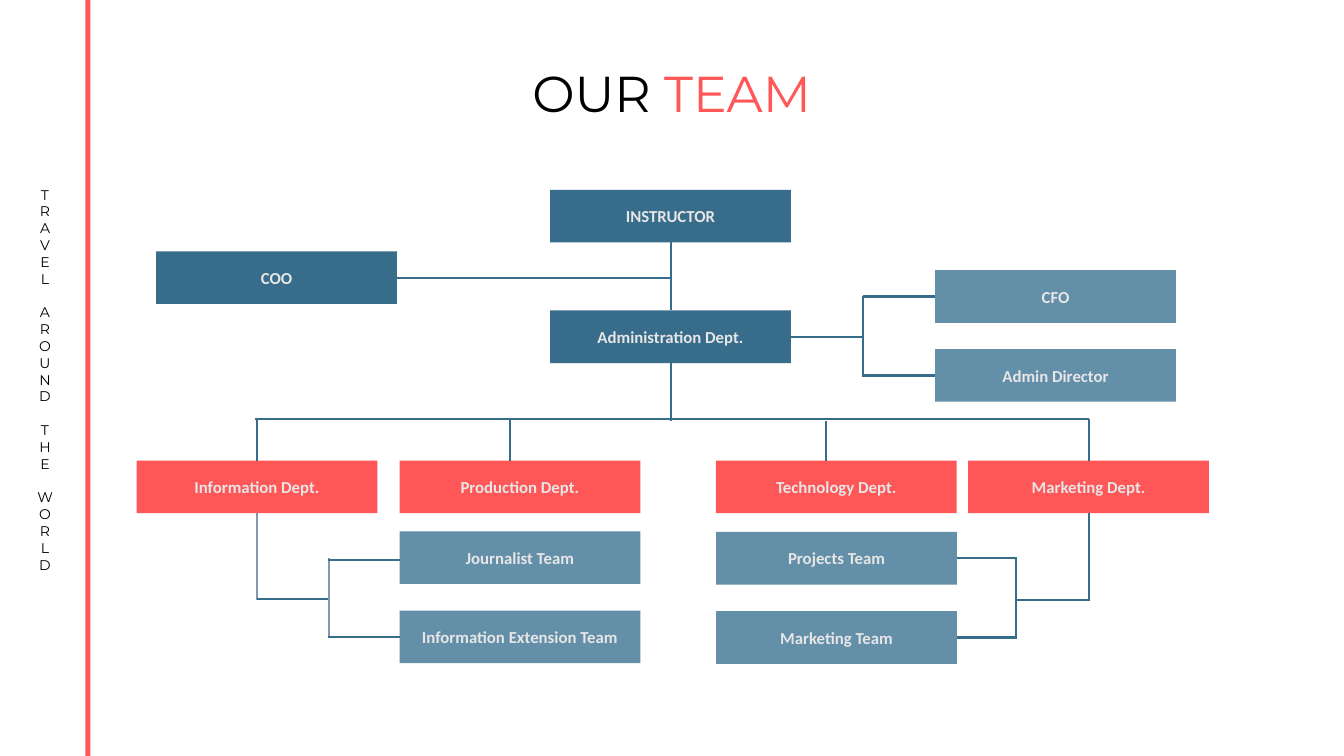
from dataclasses import dataclass

from lxml import etree
from pptx import Presentation
from pptx.dml.color import RGBColor
from pptx.enum.shapes import MSO_CONNECTOR, MSO_SHAPE
from pptx.enum.text import MSO_ANCHOR, MSO_AUTO_SIZE, PP_ALIGN
from pptx.oxml.ns import qn
from pptx.util import Pt

RECT = MSO_SHAPE.RECTANGLE
STRAIGHT = MSO_CONNECTOR.STRAIGHT
MIDDLE = MSO_ANCHOR.MIDDLE
CENTER = PP_ALIGN.CENTER
FIT_SHAPE = MSO_AUTO_SIZE.SHAPE_TO_FIT_TEXT

BLACK = RGBColor(0x00, 0x00, 0x00)
CORAL = RGBColor(0xFF, 0x56, 0x57)
NAVY = RGBColor(0x37, 0x6C, 0x8A)
STEEL = RGBColor(0x63, 0x8F, 0xA9)
GREY_BLUE = RGBColor(0x84, 0x97, 0xB0)
LIGHT = RGBColor(0xE7, 0xE6, 0xE6)

BOX_W, BOX_H = 172, 37.6
TOP, LEFT, BOTTOM, RIGHT = range(4)


@dataclass
class Box:
    label: str
    x: float
    y: float
    color: RGBColor


# An end is a point (x, y) or a box side (label, side)
End = tuple[float, float] | tuple[str, int]


@dataclass
class Link:
    begin: End
    end: End
    color: RGBColor = NAVY


BOXES = [
    Box("INSTRUCTOR", 393, 135.6, NAVY),
    Box("COO", 111.6, 179.6, NAVY),
    Box("Administration Dept.", 393, 221.8, NAVY),
    Box("CFO", 668, 193, STEEL),
    Box("Admin Director", 668, 249.4, STEEL),
    Box("Information Dept.", 97.6, 329, CORAL),
    Box("Production Dept.", 285.4, 329, CORAL),
    Box("Technology Dept.", 511.4, 329, CORAL),
    Box("Marketing Dept.", 691.6, 329, CORAL),
    Box("Journalist Team", 285.4, 379.6, STEEL),
    Box("Information Extension Team", 285.4, 436.2, STEEL),
    Box("Projects Team", 511.6, 380, STEEL),
    Box("Marketing Team", 511.6, 436.6, STEEL),
]

LINKS = [
    # Management
    Link(("INSTRUCTOR", BOTTOM), ("Administration Dept.", TOP)),
    Link(("COO", RIGHT), (479, 198.4)),
    Link(("Administration Dept.", RIGHT), (616.6, 240.6)),
    Link((616.6, 269), (616.6, 211.8)),
    Link((616.6, 211.8), ("CFO", LEFT)),
    Link((616.6, 268.2), ("Admin Director", LEFT)),
    # Departments
    Link(("Administration Dept.", BOTTOM), (479, 300.6)),
    Link((182.4, 299.4), (777.6, 299.4)),
    Link((183.6, 299.4), ("Information Dept.", TOP)),
    Link((364.4, 299.4), (364.4, 329)),
    Link((589.8, 300.6), (589.8, 329)),
    Link((777.6, 299.4), ("Marketing Dept.", TOP)),
    # Information teams
    Link(("Information Dept.", BOTTOM), (183.6, 428.6), GREY_BLUE),
    Link((183.6, 427.8), (234.8, 427.8)),
    Link((234.8, 455.8), (234.8, 398.8), GREY_BLUE),
    Link((234, 400), (285.4, 400)),
    Link((234, 455), ("Information Extension Team", LEFT)),
    # Marketing teams
    Link(("Marketing Dept.", BOTTOM), (777.6, 429)),
    Link((777.6, 428.4), (725.8, 428.4)),
    Link((725.8, 455.8), (725.8, 398.8)),
    Link(("Projects Team", RIGHT), (726.4, 398.8)),
    Link(("Marketing Team", RIGHT), (726.4, 455.4)),
]


def add_rect(s, x: float, y: float, w: float, h: float, color: RGBColor):
    sp = s.shapes.add_shape(RECT, Pt(x), Pt(y), Pt(w), Pt(h))
    sp.shadow.inherit = False
    sp.fill.solid()
    sp.fill.fore_color.rgb = color
    sp.line.fill.background()
    return sp


def add_box(s, box: Box):
    sp = add_rect(s, box.x, box.y, BOX_W, BOX_H, box.color)
    tf = sp.text_frame
    tf.vertical_anchor = MIDDLE
    p = tf.paragraphs[0]
    p.text = box.label
    p.alignment = CENTER
    p.font.name = "Calibri"
    p.font.size = Pt(12)
    p.font.bold = True
    p.font.color.rgb = LIGHT
    return sp


def add_link(s, link: Link, shapes: dict) -> None:
    ends = (link.begin, link.end)
    points = [(0, 0) if isinstance(e[0], str) else e for e in ends]
    (x1, y1), (x2, y2) = points
    cx = s.shapes.add_connector(STRAIGHT, Pt(x1), Pt(y1), Pt(x2), Pt(y2))
    for (target, side), connect in zip(ends, (cx.begin_connect, cx.end_connect)):
        if isinstance(target, str):
            connect(shapes[target], side)
    cx.line.color.rgb = link.color
    cx.line.width = Pt(1.5)
    etree.SubElement(cx.element.spPr, qn("a:effectLst"))


def add_text(s, x: float, y: float, w: float, h: float, size: float,
             runs: list[tuple[str, RGBColor]]):
    sp = s.shapes.add_textbox(Pt(x), Pt(y), Pt(w), Pt(h))
    tf = sp.text_frame
    tf.word_wrap = False
    tf.auto_size = FIT_SHAPE
    p = tf.paragraphs[0]
    p.alignment = CENTER
    p.font.name = "Montserrat"
    p.font.size = Pt(size)
    for text, color in runs:
        r = p.add_run()
        r.text = text
        r.font.color.rgb = color
    return sp


def main() -> None:
    prs = Presentation()
    prs.slide_width, prs.slide_height = Pt(960), Pt(540)
    s = prs.slides.add_slide(prs.slide_layouts[6])

    # Side strip with stacked letters
    motto = add_text(s, 16.6, 80.6, 31, 381, 10,
                     [("TRAVEL AROUND THE WORLD", BLACK)])
    motto.element.txBody.bodyPr.set("vert", "wordArtVert")
    add_rect(s, 61, 0, 3.6, 540, CORAL)

    # Organisation chart
    shapes = {box.label: add_box(s, box) for box in BOXES}
    for link in LINKS:
        add_link(s, link, shapes)

    # Title
    add_text(s, 368.6, 41, 222.4, 51, 36, [("OUR ", BLACK), ("TEAM", CORAL)])

    prs.save("out.pptx")


if __name__ == "__main__":
    main()
